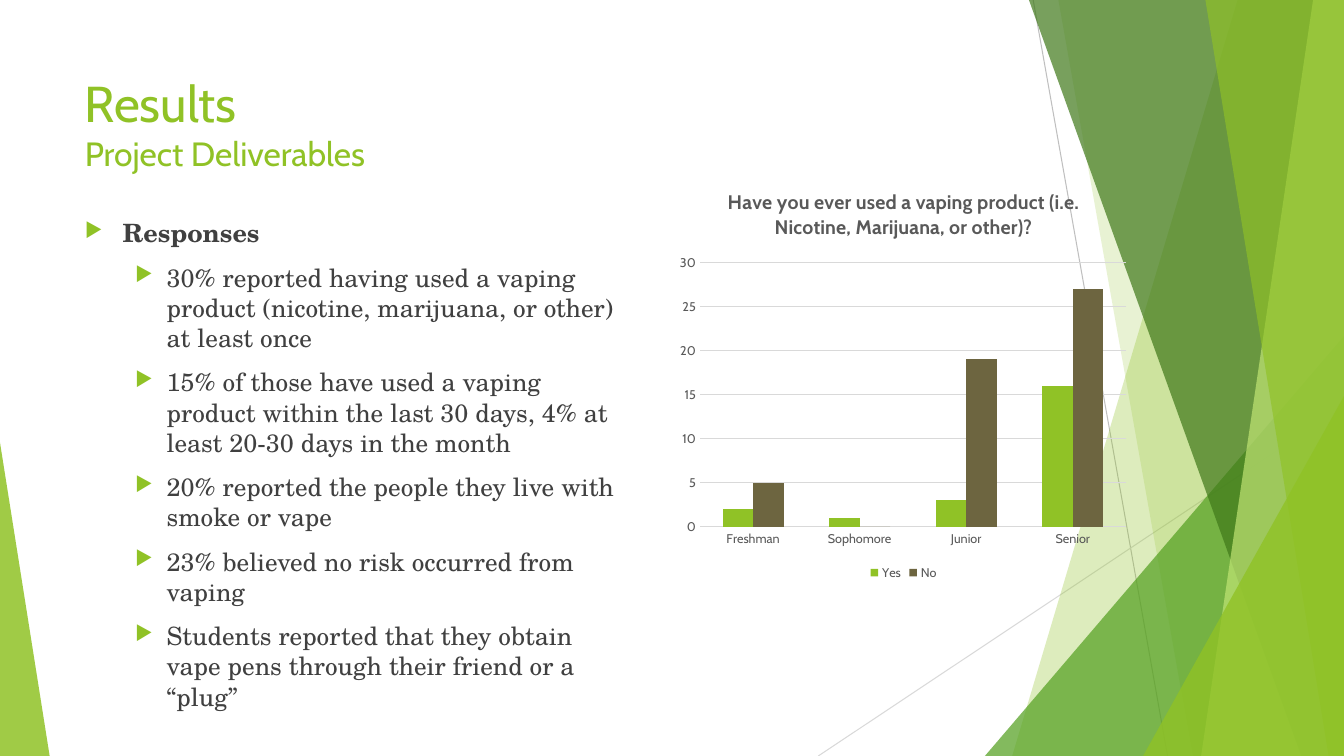
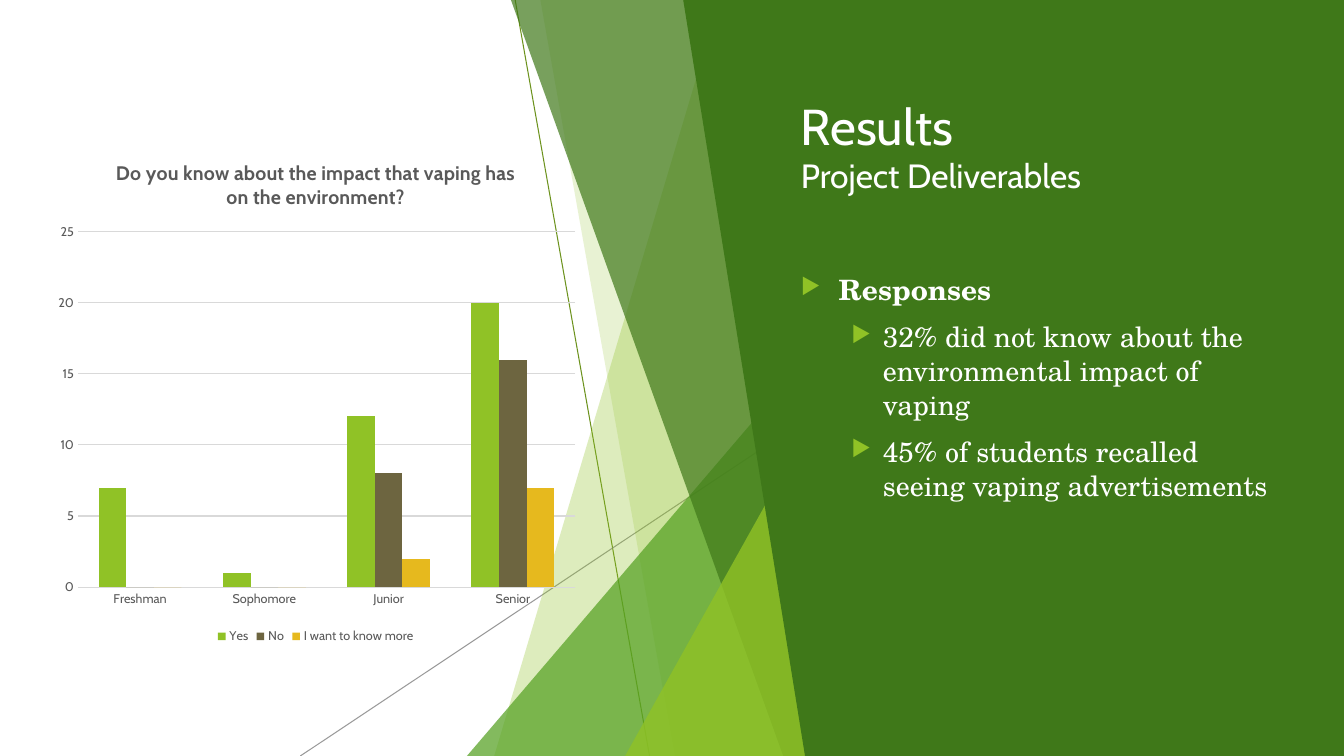
from dataclasses import dataclass
from typing import Any, NamedTuple

from lxml.etree import SubElement
from pptx import Presentation
from pptx.chart.data import CategoryChartData
from pptx.dml.color import RGBColor
from pptx.enum.chart import XL_CHART_TYPE as ChartType, XL_LEGEND_POSITION as LegendPosition
from pptx.enum.chart import XL_TICK_MARK as TickMark
from pptx.enum.shapes import MSO_CONNECTOR as Connector, MSO_SHAPE as Preset
from pptx.enum.text import MSO_ANCHOR as Anchor
from pptx.oxml.ns import qn
from pptx.util import Pt

LIME = RGBColor(0x90, 0xC2, 0x26)
PALE_LIME = RGBColor(0xC0, 0xE4, 0x74)
GREEN = RGBColor(0x54, 0xA0, 0x21)
FOREST = RGBColor(0x3F, 0x78, 0x19)
OLIVE = RGBColor(0x6D, 0x65, 0x40)
GOLD = RGBColor(0xE6, 0xB9, 0x1E)
MOSS = RGBColor(0x6C, 0x92, 0x1D)
WHITE = RGBColor(0xFF, 0xFF, 0xFF)
INK = RGBColor(0x40, 0x40, 0x40)
CHART_INK = RGBColor(0x59, 0x59, 0x59)
GREY = RGBColor(0x80, 0x80, 0x80)
SILVER = RGBColor(0xBF, 0xBF, 0xBF)
MIST = RGBColor(0xD9, 0xD9, 0xD9)

HEADING_FONT = "Cabin"
BODY_FONT = "TeX Gyre Schola"
WIDTH, HEIGHT = 960, 540
SPLIT_SHIFT = -370
GRADES = ("Freshman", "Sophomore", "Junior", "Senior")


class Box(NamedTuple):
    left: float
    top: float
    width: float
    height: float

    def lengths(self) -> list[Pt]:
        return [Pt(value) for value in self]


class Facet(NamedTuple):
    """Area from a slanted left edge to the right edge of the page."""
    top_x: float
    bottom_x: float
    colour: RGBColor
    opacity: int
    split: bool = True  # also part of the shifted set


class Wedge(NamedTuple):
    box: Box
    colour: RGBColor
    opacity: int
    apex: float = 1
    split: bool = True


class Ray(NamedTuple):
    start: tuple[float, float]
    end: tuple[float, float]


class Series(NamedTuple):
    name: str
    values: tuple[int, ...]
    colour: RGBColor


class Level(NamedTuple):
    margin: float
    hanging: float
    bold: bool


@dataclass
class ColumnChart:
    box: Box
    plot: dict[str, float]  # plot area as fractions of the chart
    title: str
    maximum: int
    series: list[Series]


@dataclass
class ResultPage:
    shift: float
    ray_colours: tuple[RGBColor, RGBColor]
    ray_opacity: int
    title_box: Box
    title_anchor: Anchor
    title_colour: RGBColor
    body_box: Box
    body_colour: RGBColor
    body_size: int
    responses: list[str]
    chart: ColumnChart


RAYS = (Ray((738, 0), (834, HEIGHT)), Ray((WIDTH, 290), (584.5, HEIGHT)))
DECORATION = (
    Facet(884, 723, LIME, 30),
    Facet(756, 852, LIME, 20),
    Wedge(Box(703.5, 240, 256.5, 300), GREEN, 72),
    Facet(735, 929.5, FOREST, 70),
    Facet(938, 858, PALE_LIME, 70, split=False),
    Facet(861, 949, LIME, 65, split=False),
    Wedge(Box(816.5, 283, 143.5, 257), LIME, 80),
    Wedge(Box(0, 316, 35.5, 224), LIME, 85, apex=0, split=False),
)
SPLIT_PANEL = Facet(488, 575, FOREST, 100)
LEVELS = (Level(27, 27, True), Level(58.5, 22.5, False))

PAGES = (
    ResultPage(
        0, (SILVER, MIST), 100,
        Box(53.5, 48, 677, 104), Anchor.TOP, LIME,
        Box(53.5, 152, 393, 357), INK, 18,
        ["30% reported having used a vaping product (nicotine, marijuana, or other) at least once",
         "15% of those have used a vaping product within the last 30 days, "
         "4% at least 20-30 days in the month",
         "20% reported the people they live with smoke or vape",
         "23% believed no risk occurred from vaping",
         "Students reported that they obtain vape pens through their friend or a “plug”"],
        ColumnChart(
            Box(480, 122.5, 331, 295), {"x": 0.06, "y": 0.22, "w": 0.92, "h": 0.64},
            "Have you ever used a vaping product (i.e. Nicotine, Marijuana, or other)?", 30,
            [Series("Yes", (2, 1, 3, 16), LIME), Series("No", (5, 0, 19, 27), OLIVE)]),
    ),
    ResultPage(
        SPLIT_SHIFT, (MOSS, GREY), 80,
        Box(565, 16, 356, 175.5), Anchor.MIDDLE, WHITE,
        Box(565, 191, 356, 261), WHITE, 20,
        ["32% did not know about the environmental impact of vaping",
         "45% of students recalled seeing vaping advertisements"],
        ColumnChart(
            Box(32.5, 100, 386, 363), {"x": 0.06, "y": 0.18, "w": 0.92, "h": 0.7},
            "Do you know about the impact that vaping has on the environment?", 25,
            [Series("Yes", (7, 1, 12, 20), LIME), Series("No", (0, 0, 8, 16), OLIVE),
             Series("I want to know more", (0, 0, 2, 7), GOLD)]),
    ),
)


def apply(target: Any, formats: dict[str, Any]) -> None:
    """Set every named attribute; "colour" goes to the font colour."""
    for name, value in formats.items():
        if name == "colour":
            target.color.rgb = value
        else:
            setattr(target, name, value)


def set_opacity(shape: Any, percent: int) -> None:
    if percent < 100:
        for colour in shape.element.spPr.iter(qn("a:srgbClr")):
            SubElement(colour, qn("a:alpha"), val=str(percent * 1000))


def paint(shape: Any, colour: RGBColor, opacity: int) -> None:
    shape.shadow.inherit = False
    shape.fill.solid()
    shape.fill.fore_color.rgb = colour
    shape.line.fill.background()
    set_opacity(shape, opacity)


def add_ray(page: Any, ray: Ray, colour: RGBColor, opacity: int, shift: float) -> None:
    (x1, y1), (x2, y2) = ray
    line = page.shapes.add_connector(
        Connector.STRAIGHT, Pt(x1 + shift), Pt(y1), Pt(x2 + shift), Pt(y2))
    line.line.color.rgb = colour
    line.line.width = Pt(0.75)
    set_opacity(line, opacity)
    SubElement(line.element.spPr, qn("a:effectLst"))


def add_facet(page: Any, facet: Facet, shift: float = 0) -> None:
    right = Pt(WIDTH + shift)
    outline = page.shapes.build_freeform(Pt(facet.top_x + shift), 0)
    outline.add_line_segments(
        [(right, 0), (right, Pt(HEIGHT)), (Pt(facet.bottom_x + shift), Pt(HEIGHT))])
    paint(outline.convert_to_shape(), facet.colour, facet.opacity)


def add_wedge(page: Any, wedge: Wedge, shift: float) -> None:
    box = wedge.box._replace(left=wedge.box.left + shift)
    shape = page.shapes.add_shape(Preset.ISOSCELES_TRIANGLE, *box.lengths())
    shape.adjustments[0] = wedge.apex
    paint(shape, wedge.colour, wedge.opacity)


def add_decoration(page: Any, result: ResultPage) -> None:
    for ray, colour, opacity in zip(RAYS, result.ray_colours, (100, result.ray_opacity)):
        add_ray(page, ray, colour, opacity, result.shift)
    for item in DECORATION:
        if result.shift and not item.split:
            continue
        draw = add_facet if isinstance(item, Facet) else add_wedge
        draw(page, item, result.shift)
    if result.shift:
        add_facet(page, SPLIT_PANEL)


def add_text_frame(page: Any, box: Box, anchor: Anchor) -> Any:
    frame = page.shapes.add_textbox(*box.lengths()).text_frame
    apply(frame, {"word_wrap": True, "vertical_anchor": anchor})
    return frame


def add_span(para: Any, text: str, formats: dict[str, Any]) -> None:
    span = para.add_run()
    span.text = text
    apply(span.font, formats)


def add_title(page: Any, result: ResultPage) -> None:
    para = add_text_frame(page, result.title_box, result.title_anchor).paragraphs[0]
    formats = {"name": HEADING_FONT, "colour": result.title_colour}
    add_span(para, "Results", formats | {"size": Pt(36)})
    para.add_line_break()
    add_span(para, "Project Deliverables", formats | {"size": Pt(24)})


def add_bullet(para: Any, level: Level) -> None:
    properties = para._p.get_or_add_pPr()
    properties.set("marL", str(Pt(level.margin)))
    properties.set("indent", str(-Pt(level.hanging)))
    colour = SubElement(properties, qn("a:buClr"))
    SubElement(colour, qn("a:srgbClr"), val=str(LIME))
    SubElement(properties, qn("a:buSzPct"), val="80000")
    SubElement(properties, qn("a:buChar"), char="▶")


def add_body(page: Any, result: ResultPage) -> None:
    frame = add_text_frame(page, result.body_box, Anchor.TOP)
    formats = {"name": BODY_FONT, "size": Pt(result.body_size), "colour": result.body_colour}
    for index, text in enumerate(["Responses", *result.responses]):
        para = frame.add_paragraph() if index else frame.paragraphs[0]
        depth = min(index, 1)
        apply(para, {"level": depth, "space_before": Pt(10)})
        add_bullet(para, LEVELS[depth])
        add_span(para, text, formats | {"bold": LEVELS[depth].bold})


def place_plot(chart: Any, plot: dict[str, float]) -> None:
    """Fix the inner plot area inside the chart."""
    area = chart._chartSpace.chart.plotArea
    for old in area.findall(qn("c:layout")):
        area.remove(old)
    layout = area.makeelement(qn("c:layout"))
    area.insert(0, layout)
    manual = SubElement(layout, qn("c:manualLayout"))
    modes = {"layoutTarget": "inner", "xMode": "edge", "yMode": "edge"}
    for name, value in (modes | plot).items():
        SubElement(manual, qn(f"c:{name}"), val=str(value))


def add_column_chart(page: Any, spec_chart: ColumnChart) -> None:
    data = CategoryChartData()
    data.categories = GRADES
    for series in spec_chart.series:
        data.add_series(series.name, series.values)
    chart = page.shapes.add_chart(
        ChartType.COLUMN_CLUSTERED, *spec_chart.box.lengths(), data).chart
    small = {"name": HEADING_FONT, "size": Pt(9), "colour": CHART_INK}
    apply(chart.font, small)

    para = chart.chart_title.text_frame.paragraphs[0]
    add_span(para, spec_chart.title, small | {"size": Pt(14), "bold": True})
    chart.chart_title.include_in_layout = False
    chart.has_legend = True
    apply(chart.legend, {"position": LegendPosition.BOTTOM, "include_in_layout": False})
    apply(chart.legend.font, small)

    for axis in (chart.category_axis, chart.value_axis):
        apply(axis, {"major_tick_mark": TickMark.NONE, "minor_tick_mark": TickMark.NONE})
        axis.format.line.fill.background()
        apply(axis.tick_labels.font, small)
    apply(chart.value_axis, {"minimum_scale": 0, "maximum_scale": spec_chart.maximum,
                             "major_unit": 5, "has_major_gridlines": True})
    grid = chart.value_axis.major_gridlines.format.line
    grid.color.rgb = MIST
    grid.width = Pt(0.75)

    columns = chart.plots[0]
    apply(columns, {"gap_width": 150, "overlap": 0, "vary_by_categories": False})
    for drawn, series in zip(columns.series, spec_chart.series):
        drawn.format.fill.solid()
        drawn.format.fill.fore_color.rgb = series.colour
    place_plot(chart, spec_chart.plot)


def main() -> None:
    deck = Presentation()
    apply(deck, {"slide_width": Pt(WIDTH), "slide_height": Pt(HEIGHT)})
    for result in PAGES:
        page = deck.slides.add_slide(deck.slide_layouts[6])
        add_decoration(page, result)
        add_title(page, result)
        add_body(page, result)
        add_column_chart(page, result.chart)
    deck.save("out.pptx")


if __name__ == "__main__":
    main()
